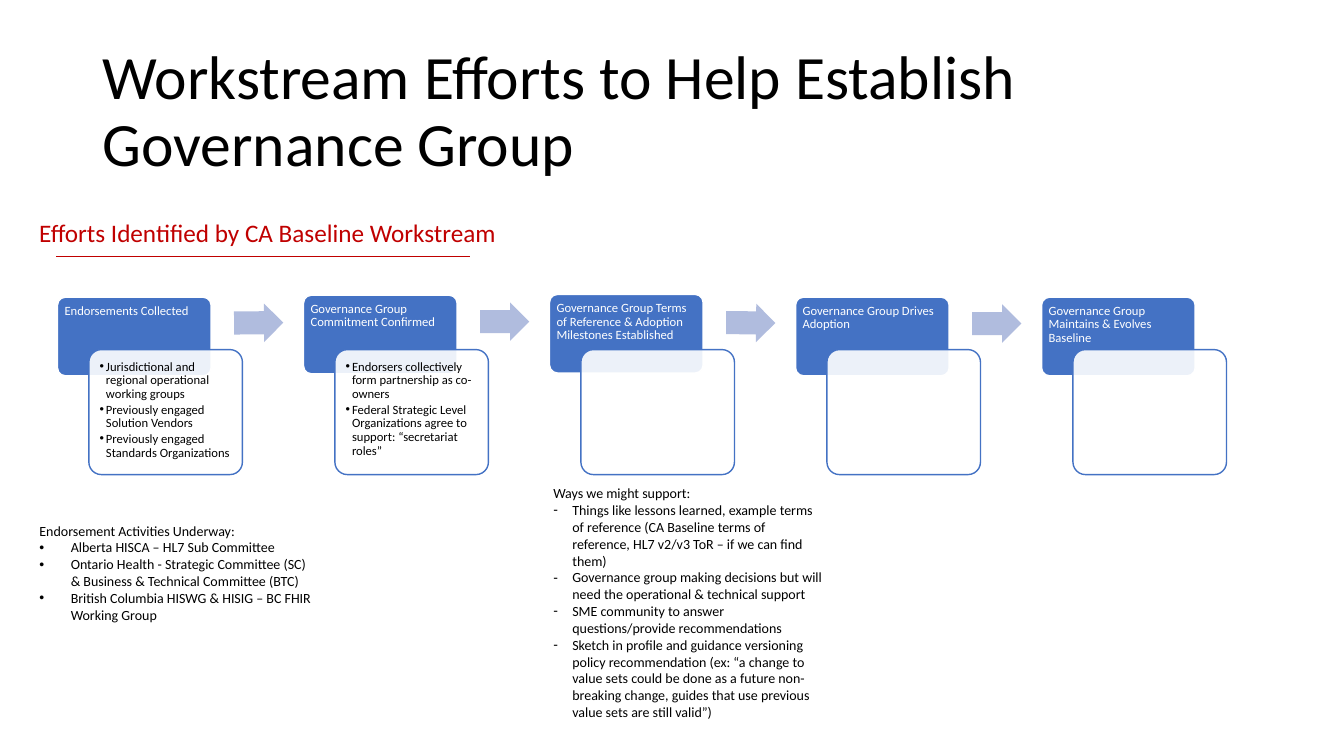
from dataclasses import dataclass

from lxml.etree import SubElement
from pptx import Presentation
from pptx.dml.color import RGBColor
from pptx.enum.shapes import MSO_CONNECTOR, MSO_SHAPE
from pptx.enum.text import MSO_ANCHOR, MSO_AUTO_SIZE, PP_ALIGN
from pptx.oxml.ns import qn
from pptx.util import Cm, Pt

COLOURS = {
    "blue": "4472C4",
    "arrow": "B0BCDE",
    "red": "C00000",
    "white": "FFFFFF",
    "black": "000000",
}
FONT = "Calibri"

STAGE_LEFT, STAGE_PITCH = 1.45, 6.2
STAGE_WIDTH = 3.87
CARD_SHIFT, CARD_TOP, CARD_HEIGHT = 0.79, 8.81, 3.15
HEADER_HEIGHT = 1.98
ARROW_SHIFT, ARROW_WIDTH, ARROW_HEIGHT = 4.45, 1.24, 0.97


@dataclass(frozen=True)
class Stage:
    heading: str
    top: float
    details: tuple[str, ...] = ()
    arrow_top: float | None = None
    arrow_turn: float = 0


@dataclass(frozen=True)
class SupportList:
    left: float
    top: float
    height: float
    heading: str
    bullet: str
    indent: float
    items: tuple[str, ...]


STAGES = (
    Stage("Endorsements Collected", 7.49,
          ("Jurisdictional and regional operational working groups",
           "Previously engaged Solution Vendors",
           "Previously engaged Standards Organizations"), 7.65, 359.5),
    Stage("Governance Group Commitment Confirmed", 7.44,
          ("Endorsers collectively form partnership as co-owners",
           "Federal Strategic Level Organizations agree to support: “secretariat roles”"),
          7.62, 359.9),
    Stage("Governance Group Terms of Reference & Adoption Milestones Established", 7.42,
          arrow_top=7.65, arrow_turn=0.6),
    Stage("Governance Group Drives Adoption", 7.49, arrow_top=7.67),
    Stage("Governance Group Maintains & Evolves Baseline", 7.49),
)

SUPPORT_LISTS = (
    SupportList(0.74, 13.03, 2.82, "Endorsement Activities Underway:", "•", 0.79, (
        "Alberta HISCA – HL7 Sub Committee",
        "Ontario Health - Strategic Committee (SC) & Business & Technical Committee (BTC)",
        "British Columbia HISWG & HISIG – BC FHIR Working Group")),
    SupportList(13.69, 12.09, 6.25, "Ways we might support:", "-", 0.48, (
        "Things like lessons learned, example terms of reference (CA Baseline terms of "
        "reference, HL7 v2/v3 ToR – if we can find them)",
        "Governance group making decisions but will need the operational & technical support",
        "SME community to answer questions/provide recommendations",
        "Sketch in profile and guidance versioning policy recommendation (ex: “a change to "
        "value sets could be done as a future non-breaking change, guides that use previous "
        "value sets are still valid”)")),
)


def colour(name: str) -> RGBColor:
    return RGBColor.from_string(COLOURS[name])


def place(box, left: float, top: float, width: float, height: float) -> None:
    box.left, box.top, box.width, box.height = Cm(left), Cm(top), Cm(width), Cm(height)


def write(para, text: str, size: float, tone: str, line: float = 1, after: float = 0) -> None:
    para.alignment = PP_ALIGN.LEFT
    para.line_spacing = line
    para.space_before, para.space_after = Pt(0), Pt(after)
    span = para.add_run()
    span.text = text
    span.font.name, span.font.size = FONT, Pt(size)
    span.font.color.rgb = colour(tone)


def set_bullet(para, bullet: str, indent: float) -> None:
    """Give a paragraph a hanging bullet, or none when the bullet is empty."""
    properties = para._p.get_or_add_pPr()
    properties.set("marL", str(Cm(indent)))
    properties.set("indent", str(-Cm(indent)))
    if bullet:
        SubElement(properties, qn("a:buFont")).set("typeface", "Arial")
        SubElement(properties, qn("a:buChar")).set("char", bullet)
    else:
        SubElement(properties, qn("a:buNone"))


def next_paragraph(frame, index: int):
    return frame.add_paragraph() if index else frame.paragraphs[0]


def add_block(page, kind, area: tuple[float, ...], fill: str, line: str | None = None):
    block = page.shapes.add_shape(kind, *map(Cm, area))
    block.shadow.inherit = False
    block.fill.solid()
    block.fill.fore_color.rgb = colour(fill)
    if line:
        block.line.color.rgb, block.line.width = colour(line), Pt(1)
    else:
        block.line.fill.background()
    return block


def add_rounded(page, area: tuple[float, ...], fill: str, line: str, inset: float):
    """Add a rounded box whose text starts at the top left."""
    box = add_block(page, MSO_SHAPE.ROUNDED_RECTANGLE, area, fill, line)
    box.adjustments[0] = 0.1
    frame = box.text_frame
    frame.word_wrap, frame.vertical_anchor = True, MSO_ANCHOR.TOP
    frame.margin_left = frame.margin_right = frame.margin_top = Cm(inset)
    frame.margin_bottom = Cm(0.1)
    return box


def add_stage(page, index: int, stage: Stage) -> None:
    left = STAGE_LEFT + index * STAGE_PITCH
    header = add_rounded(page, (left, stage.top, STAGE_WIDTH, HEADER_HEIGHT),
                         "blue", "white", 0.12)
    write(header.text_frame.paragraphs[0], stage.heading, 9, "white", 0.9)

    card = add_rounded(page, (left + CARD_SHIFT, CARD_TOP, STAGE_WIDTH, CARD_HEIGHT),
                       "white", "blue", 0.18)
    fill = card.fill._xPr.find(qn("a:solidFill"))
    SubElement(fill[0], qn("a:alpha")).set("val", "90000")
    for number, detail in enumerate(stage.details):
        para = next_paragraph(card.text_frame, number)
        write(para, detail, 9, "black", 0.9, 1.4)
        set_bullet(para, "•", 0.16)

    if stage.arrow_top is not None:
        arrow = add_block(page, MSO_SHAPE.RIGHT_ARROW,
                          (left + ARROW_SHIFT, stage.arrow_top, ARROW_WIDTH, ARROW_HEIGHT),
                          "arrow")
        arrow.adjustments[0], arrow.adjustments[1] = 0.6, 0.5
        arrow.rotation = stage.arrow_turn


def fill_list(box, content: SupportList) -> None:
    place(box, content.left, content.top, 7.37, content.height)
    frame = box.text_frame
    frame.word_wrap, frame.auto_size = True, MSO_AUTO_SIZE.NONE
    for number, text in enumerate((content.heading, *content.items)):
        para = next_paragraph(frame, number)
        write(para, text, 10, "black")
        set_bullet(para, content.bullet if number else "", content.indent if number else 0)


def add_subheading(page) -> None:
    rule = page.shapes.add_connector(MSO_CONNECTOR.STRAIGHT,
                                     Cm(1.42), Cm(6.45), Cm(11.84), Cm(6.45))
    rule.line.color.rgb, rule.line.width = colour("red"), Pt(0.5)
    SubElement(rule._element.spPr, qn("a:effectLst"))
    box = page.shapes.add_textbox(Cm(0.74), Cm(5.36), Cm(12.12), Cm(1.02))
    box.text_frame.word_wrap = True
    write(box.text_frame.paragraphs[0], "Efforts Identified by CA Baseline Workstream", 18, "red")


def main() -> None:
    deck = Presentation()
    deck.slide_width, deck.slide_height = Cm(33.87), Cm(19.05)
    page = deck.slides.add_slide(deck.slide_layouts.get_by_name("Two Content"))

    title = page.shapes.title
    place(title, 2.33, 1.01, 29.21, 3.68)
    title.text_frame.auto_size = MSO_AUTO_SIZE.NONE
    title.text_frame.vertical_anchor = MSO_ANCHOR.MIDDLE
    write(title.text_frame.paragraphs[0],
          "Workstream Efforts to Help Establish Governance Group", 44, "black", 0.9)

    for index, stage in enumerate(STAGES):
        add_stage(page, index, stage)
    add_subheading(page)
    for number, content in enumerate(SUPPORT_LISTS, start=1):
        fill_list(page.placeholders[number], content)

    # The layout's date, footer and number areas are not carried over to the page.
    deck.save("out.pptx")


if __name__ == "__main__":
    main()
